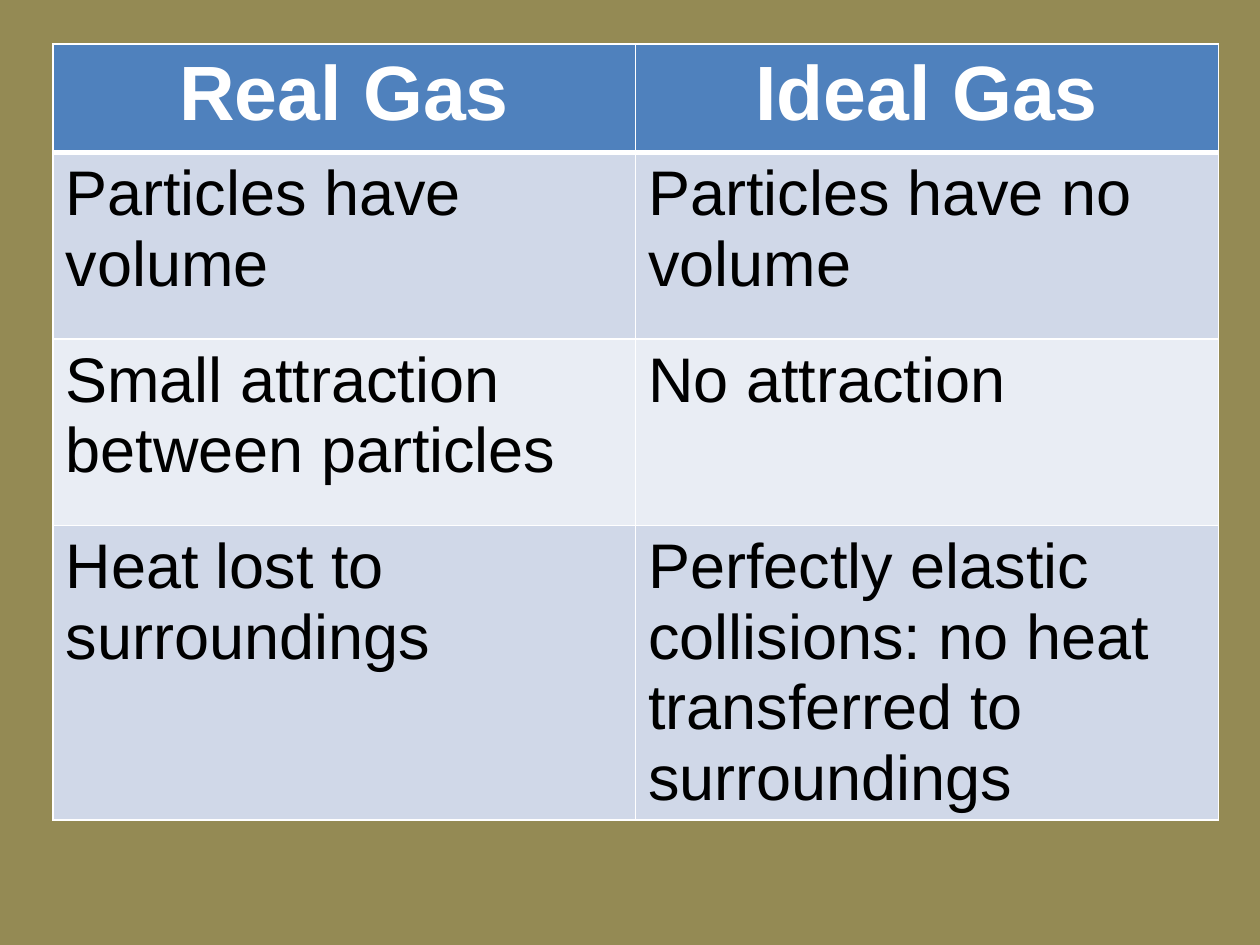
from lxml import etree
from pptx import Presentation
from pptx.dml.color import RGBColor
from pptx.enum.text import PP_ALIGN
from pptx.oxml.ns import qn
from pptx.util import Inches, Pt

CENTER, LEFT = PP_ALIGN.CENTER, PP_ALIGN.LEFT
BLANK_LAYOUT = 6
COLORS = {
    "background": "948A54",
    "header": "4F81BD",
    "odd_band": "D0D8E8",
    "even_band": "E9EDF4",
    "white": "FFFFFF",
    "black": "000000",
}
HEADER_FONT = {"name": "Arial", "size": Pt(44), "bold": True}
BODY_FONT = {"name": "Arial", "size": Pt(36), "bold": False}
ROW_HEIGHTS = [0.86, 1.48, 1.48, 2.11]
COLUMN_WIDTH = 4.625
GAS_ROWS = [
    ("Real Gas", "Ideal Gas"),
    ("Particles have volume", "Particles have no volume"),
    ("Small attraction between particles", "No attraction"),
    (
        "Heat lost to surroundings",
        "Perfectly elastic collisions: no heat transferred to surroundings",
    ),
]


def rgb(name):
    """Return the named palette colour."""
    return RGBColor.from_string(COLORS[name])


def add_borders(cell, widths):
    """Draw white cell borders with the given widths in points."""
    properties = cell._tc.get_or_add_tcPr()
    for side, width in widths.items():
        line = etree.SubElement(properties, qn(f"a:ln{side}"), w=str(Pt(width)))
        fill = etree.SubElement(line, qn("a:solidFill"))
        etree.SubElement(fill, qn("a:srgbClr"), val=COLORS["white"])


def fill_cell(cell, text, row_index):
    """Write and style one cell according to its row."""
    is_header = row_index == 0
    band = "header" if is_header else ("even_band", "odd_band")[row_index % 2]
    top = 3 if row_index == 1 else 1
    add_borders(cell, {"L": 1, "R": 1, "T": top, "B": 3 if is_header else 1})
    cell.fill.solid()
    cell.fill.fore_color.rgb = rgb(band)
    paragraph = cell.text_frame.paragraphs[0]
    paragraph.alignment = CENTER if is_header else LEFT
    run = paragraph.add_run()
    run.text = text
    for attribute, value in (HEADER_FONT if is_header else BODY_FONT).items():
        setattr(run.font, attribute, value)
    run.font.color.rgb = rgb("white" if is_header else "black")


def add_gas_table(slide):
    """Add the table comparing real and ideal gases."""
    column_count = len(GAS_ROWS[0])
    table = slide.shapes.add_table(
        len(GAS_ROWS), column_count, Inches(0.42), Inches(0.35),
        Inches(COLUMN_WIDTH * column_count), Inches(sum(ROW_HEIGHTS)),
    ).table
    for row, height in zip(table.rows, ROW_HEIGHTS):
        row.height = Inches(height)
    for row_index, texts in enumerate(GAS_ROWS):
        for column_index, text in enumerate(texts):
            fill_cell(table.cell(row_index, column_index), text, row_index)


def main():
    """Build and save the gas comparison slide."""
    presentation = Presentation()
    presentation.slide_width = Inches(10)
    presentation.slide_height = Inches(7.5)
    slide = presentation.slides.add_slide(presentation.slide_layouts[BLANK_LAYOUT])
    slide.background.fill.solid()
    slide.background.fill.fore_color.rgb = rgb("background")
    add_gas_table(slide)
    presentation.save("out.pptx")


if __name__ == "__main__":
    main()
